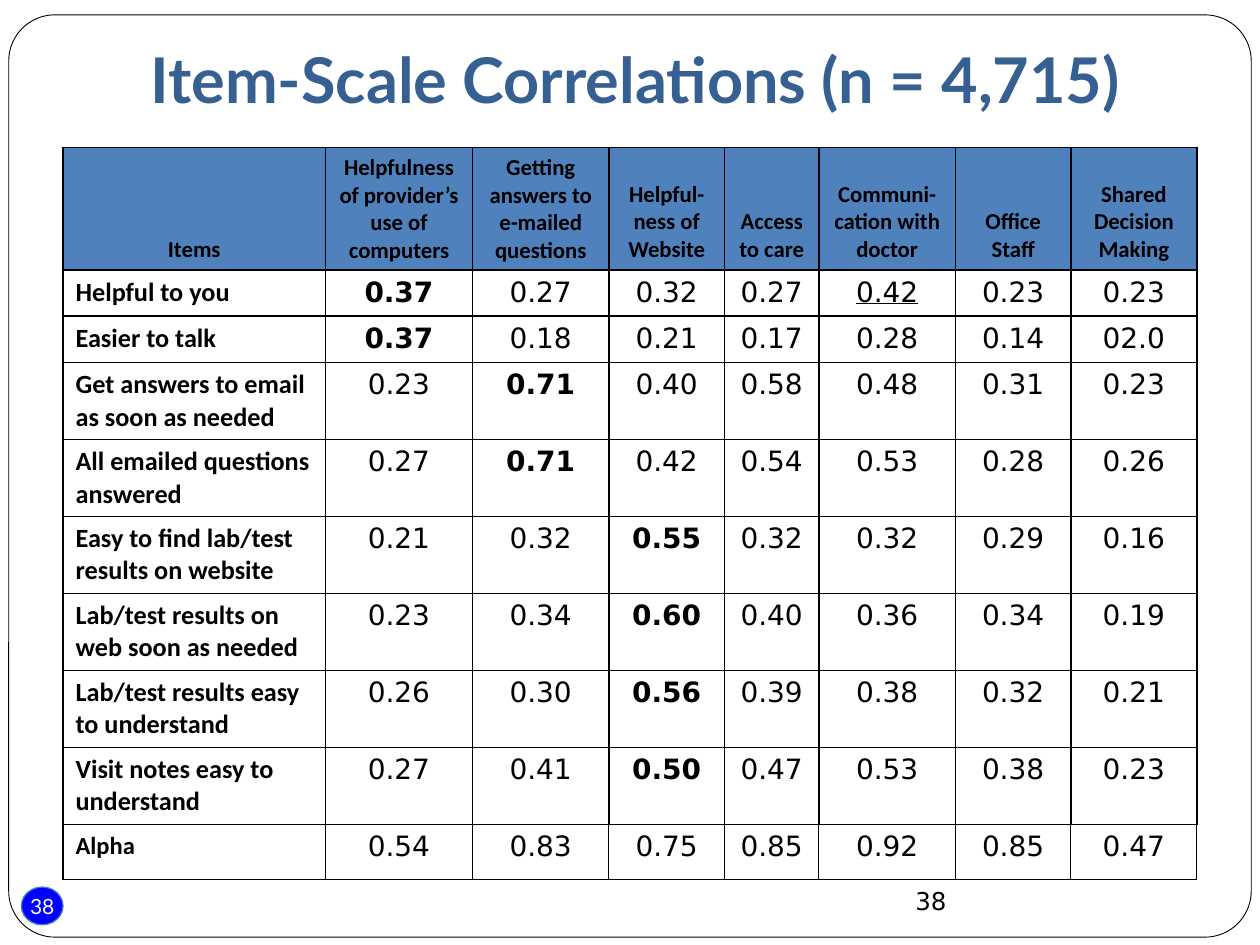
from lxml import etree
from pptx import Presentation
from pptx.dml.color import RGBColor
from pptx.enum.shapes import MSO_SHAPE
from pptx.enum.text import MSO_ANCHOR, PP_ALIGN
from pptx.oxml.ns import qn
from pptx.util import Pt

CENTER, LEFT = PP_ALIGN.CENTER, PP_ALIGN.LEFT
TOP, MIDDLE, BOTTOM = MSO_ANCHOR.TOP, MSO_ANCHOR.MIDDLE, MSO_ANCHOR.BOTTOM
OVAL, ROUNDED = MSO_SHAPE.OVAL, MSO_SHAPE.ROUNDED_RECTANGLE

BLACK, WHITE, HEADER_BLUE = "000000", "FFFFFF", "4F81BD"
HEADING, LABEL, NUMBER = "Lato", "Calibri", "DejaVu Sans"
PAGE = "38"

COL_WIDTHS = [150, 84, 78, 66, 54, 78, 66, 72]
ROW_HEIGHTS = [70] + [26.5] * 2 + [44] * 6 + [31.5]
HEADERS = ["Items", "Helpfulness of provider’s use of computers",
           "Getting answers to e-mailed questions", "Helpful-ness of Website",
           "Access to care", "Communi-cation with doctor", "Office Staff",
           "Shared Decision Making"]
# Item, column of its own scale (bold), correlations with each scale
ITEMS = [
    ("Helpful to you", 1, "0.37 0.27 0.32 0.27 0.42 0.23 0.23"),
    ("Easier to talk", 1, "0.37 0.18 0.21 0.17 0.28 0.14 02.0"),
    ("Get answers to email as soon as needed", 2, "0.23 0.71 0.40 0.58 0.48 0.31 0.23"),
    ("All emailed questions answered", 2, "0.27 0.71 0.42 0.54 0.53 0.28 0.26"),
    ("Easy to find lab/test results on website", 3, "0.21 0.32 0.55 0.32 0.32 0.29 0.16"),
    ("Lab/test results on web soon as needed", 3, "0.23 0.34 0.60 0.40 0.36 0.34 0.19"),
    ("Lab/test results easy to understand", 3, "0.26 0.30 0.56 0.39 0.38 0.32 0.21"),
    ("Visit notes easy to understand", 3, "0.27 0.41 0.50 0.47 0.53 0.38 0.23"),
    ("Alpha", None, "0.54 0.83 0.75 0.85 0.92 0.85 0.47"),
]
UNDERLINED = (1, 5)


def rgb(color):
    return RGBColor.from_string(color)


def write(tf, text, size, font, color=BLACK, bold=False, align=LEFT, underline=False):
    tf.word_wrap = True
    p = tf.paragraphs[0]
    p.alignment = align
    r = p.add_run()
    r.text = text
    r.font.size, r.font.name = Pt(size), font
    r.font.bold, r.font.underline = bold, underline
    r.font.color.rgb = rgb(color)


def place(sp, box):
    sp.left, sp.top, sp.width, sp.height = map(Pt, box)


def add_frame(slide, box):
    sp = slide.shapes.add_shape(ROUNDED, *map(Pt, box))
    sp.adjustments[0] = 0.05
    sp.shadow.inherit = False
    sp.fill.background()
    sp.line.color.rgb = rgb(BLACK)
    sp.line.width = Pt(0.5)


def add_badge(slide, box):
    sp = slide.shapes.add_shape(OVAL, *map(Pt, box))
    sp.shadow.inherit = False
    sp.fill.solid()
    sp.fill.fore_color.rgb = rgb("0000FF")
    sp.line.color.rgb = rgb("4B7EBC")
    sp.line.width = Pt(0.75)
    tf = sp.text_frame
    tf.margin_left = tf.margin_top = tf.margin_right = tf.margin_bottom = 0
    tf.vertical_anchor = MIDDLE
    write(tf, PAGE, 12, HEADING, WHITE, align=CENTER)


def add_page_number(slide, box):
    sp = slide.shapes.add_textbox(*map(Pt, box))
    write(sp.text_frame, PAGE, 14, NUMBER)


def set_title(slide, box, text):
    sp = slide.shapes.title
    place(sp, box)
    sp.text_frame.vertical_anchor = MIDDLE
    write(sp.text_frame, text, 36, HEADING, "376092", True, CENTER)


def set_borders(cell, width, top_width):
    tc_pr = cell._tc.get_or_add_tcPr()
    for side in "LRTB":
        w = top_width if side == "T" else width
        ln = etree.SubElement(tc_pr, qn("a:ln" + side), w=str(Pt(w)))
        fill = etree.SubElement(ln, qn("a:solidFill"))
        etree.SubElement(fill, qn("a:srgbClr"), val=BLACK)


def fill_cell(cell, row, col, text, own_col):
    is_header, is_alpha = row == 0, row == len(ITEMS)
    set_borders(cell, 0.75 if is_alpha else 1, 1)
    cell.vertical_anchor = BOTTOM if is_header else TOP
    if is_header:
        cell.fill.solid()
        cell.fill.fore_color.rgb = rgb(HEADER_BLUE)
        write(cell.text_frame, text, 13, LABEL, bold=True, align=CENTER)
        return
    cell.fill.background()
    if col == 0:
        write(cell.text_frame, text, 14 if is_alpha else 15, LABEL, bold=True)
    else:
        write(cell.text_frame, text, 16, NUMBER, bold=col == own_col,
              align=CENTER, underline=(row, col) == UNDERLINED)


def add_correlations(slide, box):
    rows = [(HEADERS, None)]
    rows += [([item] + values.split(), own) for item, own, values in ITEMS]
    table = slide.shapes.add_table(len(rows), len(HEADERS), *map(Pt, box)).table
    table.first_row = table.horz_banding = False
    for column, width in zip(table.columns, COL_WIDTHS):
        column.width = Pt(width)
    for i, (texts, own_col) in enumerate(rows):
        table.rows[i].height = Pt(ROW_HEIGHTS[i])
        for j, text in enumerate(texts):
            fill_cell(table.cell(i, j), i, j, text, own_col)


def main():
    prs = Presentation()
    prs.slide_width, prs.slide_height = Pt(720), Pt(540)
    slide = prs.slides.add_slide(prs.slide_layouts[5])
    add_badge(slide, (12.24, 506.9, 23.8, 21.6))
    add_frame(slide, (5, 8.5, 710, 527))
    add_page_number(slide, (516, 502.5, 168, 37.5))
    set_title(slide, (30, 0, 666, 90), "Item-Scale Correlations (n = 4,715)")
    add_correlations(slide, (36, 84.25, sum(COL_WIDTHS), sum(ROW_HEIGHTS)))
    prs.save("out.pptx")


if __name__ == "__main__":
    main()
